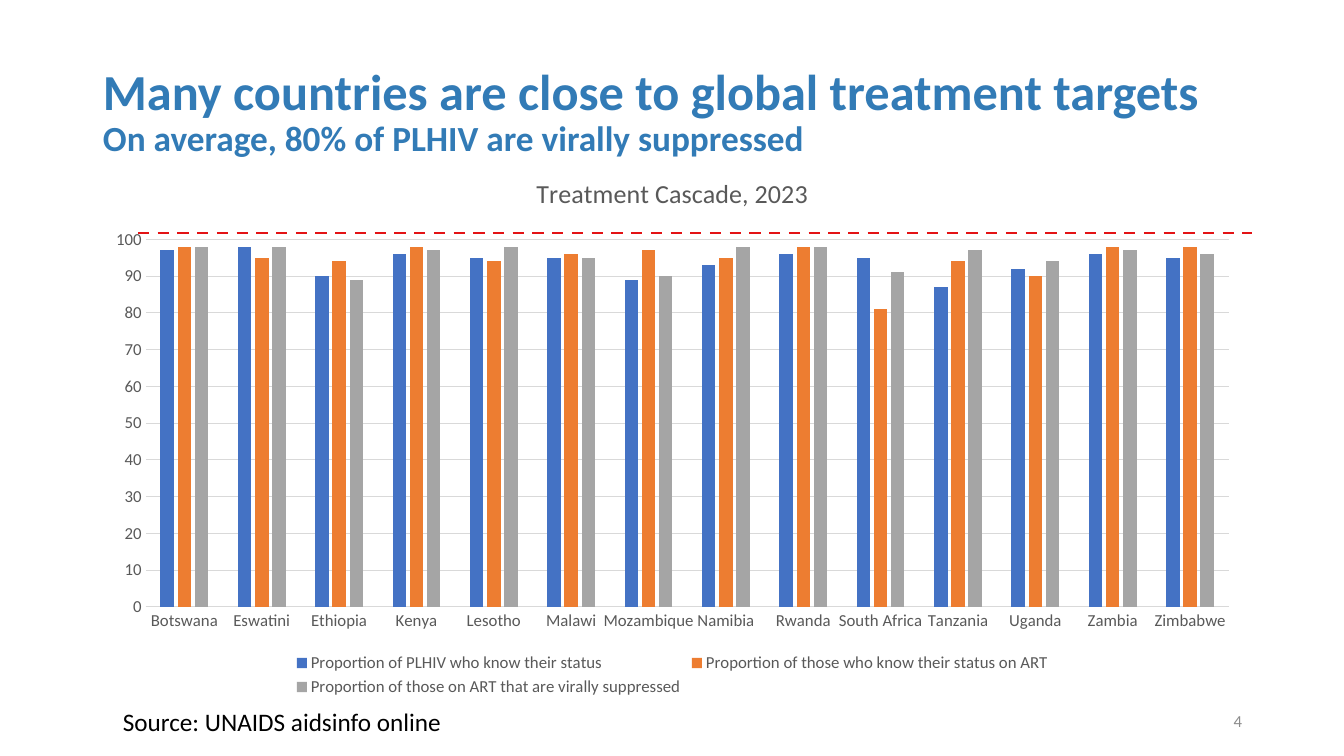
from lxml.etree import SubElement
from pptx import Presentation
from pptx.chart.data import CategoryChartData
from pptx.dml.color import RGBColor
from pptx.enum.chart import XL_CHART_TYPE, XL_LEGEND_POSITION, XL_TICK_MARK
from pptx.enum.dml import MSO_LINE
from pptx.enum.shapes import MSO_CONNECTOR
from pptx.enum.text import MSO_ANCHOR, PP_ALIGN
from pptx.oxml.ns import qn
from pptx.util import Pt

BLUE, GREY, PALE, RED = "327BB6", "595959", "D9D9D9", "E31315"
HEAD = [("Many countries are close to global treatment targets", 36),
        ("On average, 80% of PLHIV are virally suppressed", 25.2)]
SOURCE = "Source: UNAIDS aidsinfo online"
PAGE = "4"
TITLE = "Treatment Cascade, 2023"
LANDS = ["Botswana", "Eswatini", "Ethiopia", "Kenya", "Lesotho", "Malawi",
         "Mozambique", "Namibia", "Rwanda", "South Africa", "Tanzania",
         "Uganda", "Zambia", "Zimbabwe"]
SERIES = [
    ("Proportion of PLHIV who know their status", "4472C4",
     [97, 98, 90, 96, 95, 95, 89, 93, 96, 95, 87, 92, 96, 95]),
    ("Proportion of those who know their status on ART", "ED7D31",
     [98, 95, 94, 98, 94, 96, 97, 95, 98, 81, 94, 90, 98, 98]),
    ("Proportion of those on ART that are virally suppressed", "A5A5A5",
     [98, 98, 89, 97, 98, 95, 90, 98, 98, 91, 97, 94, 97, 96]),
]
LEFT, WIDE = 93, 1159
RIGHT = LEFT + WIDE
FOOT, TALL = 701, 40


def px(n):
    return round(n * 914400 / 100.8)


def box(*nums):
    return [px(n) for n in nums]


def rgb(code):
    return RGBColor.from_string(code)


def style(font, size, color, bold=False):
    for key, val in {"name": "Calibri", "size": Pt(size), "bold": bold}.items():
        setattr(font, key, val)
    font.color.rgb = rgb(color)


def stroke(line, color, width):
    line.color.rgb = rgb(color)
    line.width = Pt(width)


def write(place, lines, color, bold=False, anchor=MSO_ANCHOR.MIDDLE, **para):
    """Add a text box whose lines share one paragraph."""
    frame = slide.shapes.add_textbox(*box(*place)).text_frame
    frame.word_wrap = True
    frame.vertical_anchor = anchor
    p = frame.paragraphs[0]
    for key, val in para.items():
        setattr(p, key, val)
    for i, (text, size) in enumerate(lines):
        if i:
            p.add_line_break()
        run = p.add_run()
        run.text = text
        style(run.font, size, color, bold)


def plot(place):
    data = CategoryChartData()
    data.categories = LANDS
    for name, _, vals in SERIES:
        data.add_series(name, vals)
    chart = slide.shapes.add_chart(
        XL_CHART_TYPE.COLUMN_CLUSTERED, *box(*place), data).chart
    style(chart.font, 10, "000000")

    chart.has_title = True
    frame = chart.chart_title.text_frame
    frame.text = TITLE
    style(frame.paragraphs[0].runs[0].font, 18.6, GREY)
    chart.chart_title.include_in_layout = False

    chart.has_legend = True
    legend = chart.legend
    legend.position = XL_LEGEND_POSITION.BOTTOM
    legend.include_in_layout = False
    style(legend.font, 12, GREY)

    bars = chart.plots[0]
    for key, val in {"gap_width": 219, "overlap": -27,
                     "vary_by_categories": False}.items():
        setattr(bars, key, val)
    for ser, (_, color, _) in zip(bars.series, SERIES):
        ser.format.fill.solid()
        ser.format.fill.fore_color.rgb = rgb(color)

    cats, vals = chart.category_axis, chart.value_axis
    for axis in (cats, vals):
        axis.major_tick_mark = axis.minor_tick_mark = XL_TICK_MARK.NONE
        style(axis.tick_labels.font, 12, GREY)
    stroke(cats.format.line, PALE, 0.75)
    vals.format.line.fill.background()
    for key, val in {"minimum_scale": 0, "maximum_scale": 100,
                     "major_unit": 10, "has_major_gridlines": True}.items():
        setattr(vals, key, val)
    stroke(vals.major_gridlines.format.line, PALE, 0.75)


deck = Presentation()
deck.slide_width, deck.slide_height = box(1344, 756)
slide = deck.slides.add_slide(deck.slide_layouts[6])

write((LEFT, 40, WIDE, 146), HEAD, BLUE, bold=True, line_spacing=0.9)
plot((LEFT, 154, WIDE, 547))
write((RIGHT - 302, FOOT, 302, TALL), [(PAGE, 12)], "8C8C8C",
      alignment=PP_ALIGN.RIGHT)

target = slide.shapes.add_connector(
    MSO_CONNECTOR.STRAIGHT, *box(138, 233, RIGHT, 233))
stroke(target.line, RED, 2)
target.line.dash_style = MSO_LINE.DASH
SubElement(target._element.spPr, qn("a:effectLst"))

write((113, FOOT, 462, TALL), [(SOURCE, 18)], "000000", anchor=MSO_ANCHOR.TOP)

deck.save("out.pptx")
